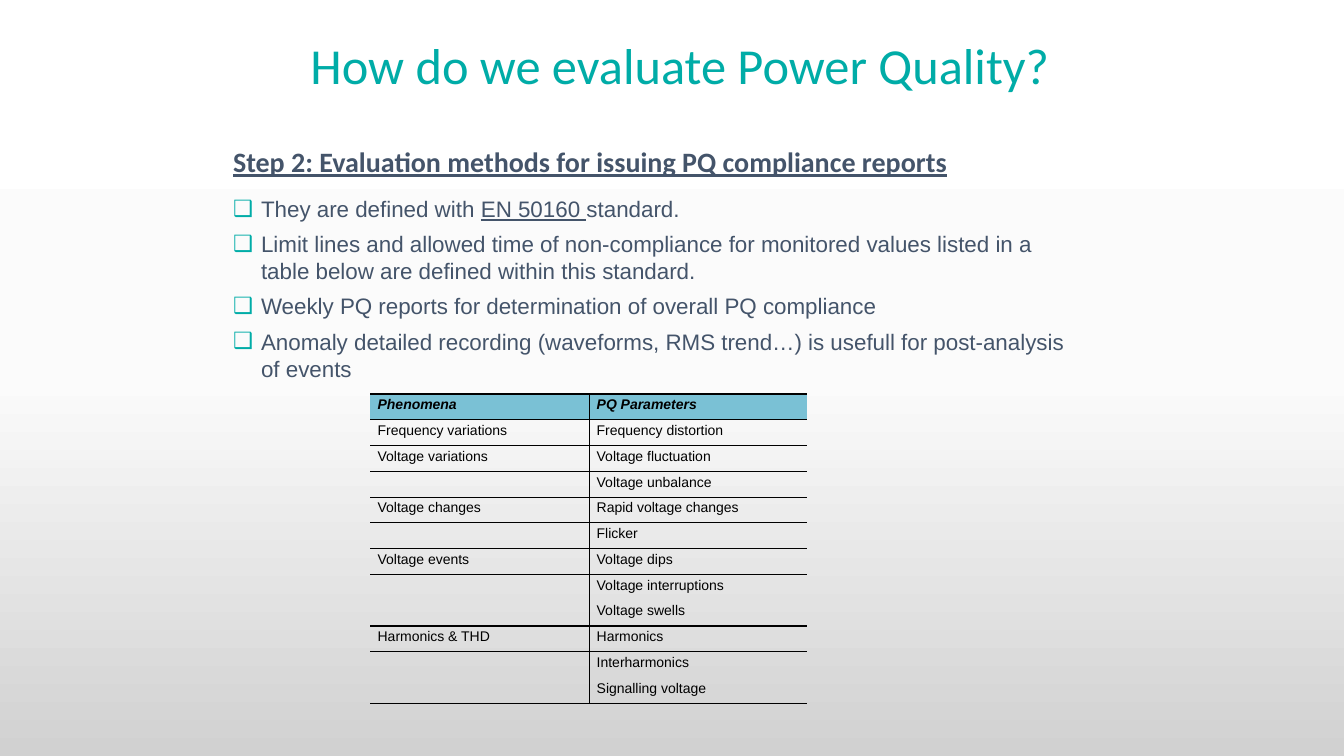
from copy import deepcopy

from lxml.etree import SubElement
from pptx import Presentation
from pptx.dml.color import RGBColor
from pptx.enum.text import MSO_ANCHOR, MSO_AUTO_SIZE, PP_ALIGN
from pptx.oxml.ns import qn
from pptx.util import Pt

COLORS = {
    "teal": "00ACA7",
    "slate": "44546A",
    "black": "000000",
    "header": "7AC1D5",
    "white": "FFFFFF",
    "pale": "FBFBFB",
    "grey": "D1D1D1",
}
NO_TABLE_STYLE = "{2D5ABB26-0587-4C30-8999-92F81FD0307C}"


def style_run(run, name, size, color, bold=False, italic=False, underline=False):
    run.font.name = name
    run.font.size = Pt(size)
    run.font.color.rgb = RGBColor.from_string(COLORS[color])
    run.font.bold = bold
    run.font.italic = italic
    run.font.underline = underline


def add_border(cell, side, width):
    line = SubElement(cell._tc.get_or_add_tcPr(), qn(f"a:ln{side}"), w=str(Pt(width)))
    fill = SubElement(line, qn("a:solidFill"))
    SubElement(fill, qn("a:srgbClr"), val=COLORS["black"])


prs = Presentation()
prs.slide_width = Pt(960)
prs.slide_height = Pt(540)
slide = prs.slides.add_slide(prs.slide_layouts[1])

backdrop = slide.background.fill
backdrop.gradient()
backdrop.gradient_angle = 270
stop_list = slide.element.find(".//" + qn("a:gsLst"))
stop_list.append(deepcopy(stop_list[0]))
for stop, position, color in zip(backdrop.gradient_stops, (0, 0.5, 1), ("white", "pale", "grey")):
    stop.position = position
    stop.color.rgb = RGBColor.from_string(COLORS[color])

title = slide.shapes.title
title.left, title.top, title.width, title.height = Pt(214.5), Pt(26), Pt(655), Pt(45.5)
title.text_frame.text = "How do we evaluate Power Quality?"
title.text_frame.auto_size = MSO_AUTO_SIZE.NONE
title.text_frame.vertical_anchor = MSO_ANCHOR.MIDDLE
headline = title.text_frame.paragraphs[0]
headline.alignment = PP_ALIGN.LEFT
headline.line_spacing = 0.9
style_run(headline.runs[0], "Calibri", 36, "teal")

methods = slide.placeholders[1]
methods.left, methods.top, methods.width, methods.height = Pt(159.25), Pt(99.75), Pt(615.5), Pt(178)
methods_frame = methods.text_frame
methods_frame.text = "Step 2: Evaluation methods for issuing PQ compliance reports"
methods_frame.auto_size = MSO_AUTO_SIZE.NONE
step = methods_frame.paragraphs[0]
step_props = step._p.get_or_add_pPr()
step_props.set("marL", "0")
step_props.set("indent", "0")
SubElement(step_props, qn("a:buNone"))
step.space_before = Pt(0)
step.space_after = Pt(12)
style_run(step.runs[0], "Calibri", 20, "slate", bold=True, underline=True)

points = [
    ["They are defined with ", "EN 50160 ", "standard."],
    ["Limit lines and allowed time of non-compliance for monitored values listed in a "
     "table below are defined within this standard."],
    ["Weekly PQ reports for determination of overall PQ compliance"],
    ["Anomaly detailed recording (waveforms, RMS trend…) is usefull for post-analysis of events"],
]
for parts in points:
    point = methods_frame.add_paragraph()
    point.level = 1
    point_props = point._p.get_or_add_pPr()
    point_props.set("marL", str(Pt(20)))
    point_props.set("indent", str(Pt(-20)))
    bullet_color = SubElement(point_props, qn("a:buClr"))
    SubElement(bullet_color, qn("a:srgbClr"), val=COLORS["teal"])
    SubElement(point_props, qn("a:buFont"), typeface="Arial")
    SubElement(point_props, qn("a:buChar"), char="❑")
    point.line_spacing = 1.0
    point.space_before = Pt(0)
    point.space_after = Pt(6)
    for part in parts:
        run = point.add_run()
        run.text = part
        style_run(run, "Arial", 16, "slate", underline=part.startswith("EN"))

groups = [
    ("Phenomena", ["PQ Parameters"]),
    ("Frequency variations", ["Frequency distortion"]),
    ("Voltage variations", ["Voltage fluctuation", "Voltage unbalance"]),
    ("Voltage changes", ["Rapid voltage changes", "Flicker"]),
    ("Voltage events", ["Voltage dips", "Voltage interruptions", "Voltage swells"]),
    ("Harmonics & THD", ["Harmonics", "Interharmonics", "Signalling voltage"]),
]
row_count = sum(len(parameters) for _, parameters in groups)
row_height = 18.42
frame = slide.shapes.add_table(
    row_count, 2, Pt(264.4), Pt(281.5), Pt(312), Pt(row_height * row_count))
table = frame.table
table.first_row = False
table.horz_banding = False
table._tbl.tblPr.find(qn("a:tableStyleId")).text = NO_TABLE_STYLE
table.columns[0].width = Pt(156.5)
table.columns[1].width = Pt(155.5)
for row in table.rows:
    row.height = Pt(row_height)

first = 0
for phenomenon, parameters in groups:
    last = first + len(parameters) - 1
    is_header = first == 0
    for index, parameter in enumerate(parameters, first):
        for column, label in enumerate((phenomenon if index == first else "", parameter)):
            cell = table.cell(index, column)
            cell.margin_left = cell.margin_right = Pt(5.4)
            cell.margin_top = cell.margin_bottom = Pt(0)
            add_border(cell, "L" if column else "R", 1)
            if index == first:
                add_border(cell, "T", 1.5 if is_header else 1)
            if index == last:
                add_border(cell, "B", 1)
            if is_header:
                cell.fill.solid()
                cell.fill.fore_color.rgb = RGBColor.from_string(COLORS["header"])
            else:
                cell.fill.background()
            entry = cell.text_frame.paragraphs[0]
            if label:
                entry.text = label
                entry.alignment = PP_ALIGN.JUSTIFY
                entry.line_spacing = 1.2
                style_run(entry.runs[0], "Arial", 10, "black", bold=is_header, italic=is_header)
            else:
                SubElement(entry._p, qn("a:endParaRPr"), sz="1000")
    first = last + 1

prs.save("out.pptx")
